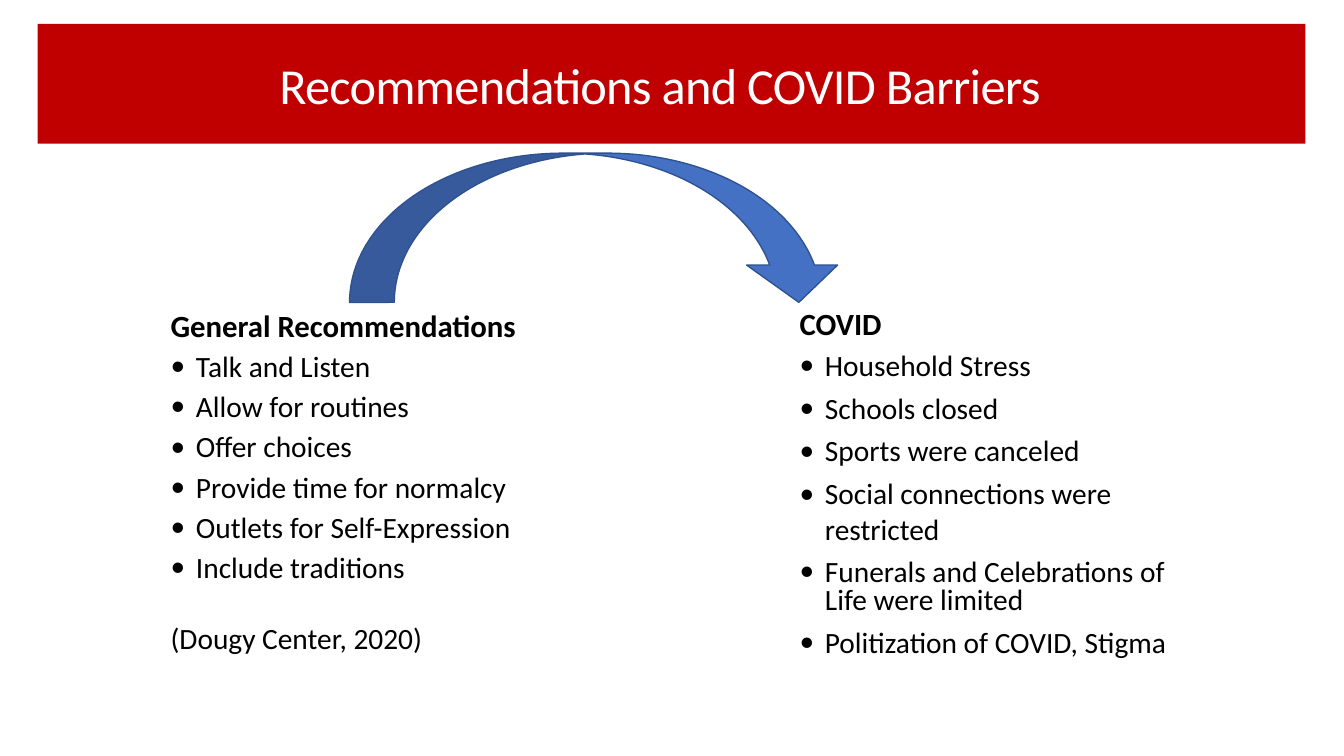
from lxml import etree
from pptx import Presentation
from pptx.dml.color import RGBColor
from pptx.enum import shapes, text
from pptx.oxml.ns import qn
from pptx.util import Cm, Pt

RED = RGBColor(0xC0, 0x00, 0x00)
WHITE = RGBColor(0xFF, 0xFF, 0xFF)
BLACK = RGBColor(0x00, 0x00, 0x00)
BLUE = RGBColor(0x44, 0x71, 0xC4)
DARK_BLUE = RGBColor(0x2E, 0x52, 0x8F)

RECOMMENDATIONS = [
    "Talk and Listen",
    "Allow for routines",
    "Offer choices",
    "Provide time for normalcy",
    "Outlets for Self-Expression",
    "Include traditions",
]
BARRIERS = [
    "Household Stress",
    "Schools closed",
    "Sports were canceled",
    "Social connections were restricted",
    "Funerals and Celebrations of Life were limited",
    "Politization of COVID, Stigma",
]


def add_frame(slide, left, top, width, height, inset_top):
    """Add a wrapping text box and return its text frame."""
    frame = slide.shapes.add_textbox(left, top, width, height).text_frame
    frame.word_wrap = True
    frame.margin_left, frame.margin_top = Cm(0.03), inset_top
    frame.margin_right = frame.margin_bottom = 0
    return frame


def add_line(frame, wording, size, color=BLACK, bold=False, before=0, bullet=False):
    """Write the next paragraph of a frame and return it."""
    line = frame.paragraphs[0]
    if line.text:
        line = frame.add_paragraph()
        line.space_before = Pt(before)
    line.text = wording
    if bullet:
        properties = line._p.get_or_add_pPr()
        properties.set("marL", str(Cm(0.64)))
        properties.set("indent", str(-Cm(0.64)))
        etree.SubElement(properties, qn("a:buFont")).set("typeface", "Calibri")
        etree.SubElement(properties, qn("a:buChar")).set("char", "•")
    for run in line.runs:
        run.font.name = "Calibri"
        run.font.size = Pt(size)
        run.font.bold = bold
        run.font.color.rgb = color
    return line


def add_title_band(slide, left, top, width, height):
    """Draw the red band with the slide title."""
    band = slide.shapes.add_shape(shapes.MSO_SHAPE.RECTANGLE, left, top, width, height)
    band.shadow.inherit = False
    band.fill.solid()
    band.fill.fore_color.rgb = RED
    band.line.fill.background()
    frame = add_frame(slide, left + Cm(6.06), top + Cm(0.7), Cm(19.84), Cm(1.6), Cm(0.03))
    frame.vertical_anchor = text.MSO_ANCHOR.MIDDLE
    title = add_line(frame, "Recommendations and COVID Barriers", 36, WHITE)
    title.runs[0]._r.get_or_add_rPr().set("spc", "-50")


def add_arrow(slide, left, top, width, height):
    """Draw the curved arrow from the recommendations to the barriers."""
    arrow = slide.shapes.add_shape(shapes.MSO_SHAPE.CURVED_DOWN_ARROW, left, top, width, height)
    arrow.shadow.inherit = False
    for index, share in enumerate((0.3, 0.61, 0.25)):
        arrow.adjustments[index] = share
    arrow.fill.solid()
    arrow.fill.fore_color.rgb = BLUE
    arrow.line.color.rgb = DARK_BLUE
    arrow.line.width = Pt(0.96)


def add_recommendations(slide, left, top, width, height):
    """Write the general recommendations and their citation."""
    frame = add_frame(slide, left, top, width, height, Cm(0.15))
    add_line(frame, "General Recommendations", 22, bold=True)
    for recommendation in RECOMMENDATIONS:
        add_line(frame, recommendation, 21, before=3.5, bullet=True)
    add_line(frame, "(Dougy Center, 2020)", 21, before=25.5)


def add_barriers(slide, left, top, width, height):
    """Write the COVID heading and the barriers below it."""
    heading = add_frame(slide, left, top, Cm(2.2), Cm(0.99), Cm(0.03))
    add_line(heading, "COVID", 22, bold=True)
    list_top = Cm(0.86)
    frame = add_frame(slide, left, top + list_top, width, height - list_top, Cm(0.23))
    for barrier in BARRIERS:
        line = add_line(frame, barrier, 21, before=5.4, bullet=True)
        if barrier.startswith("Funerals"):
            line.line_spacing = 0.8
            line.space_before = Pt(10.1)


def main():
    """Build and save the slide."""
    deck = Presentation()
    deck.slide_width, deck.slide_height = Cm(33.87), Cm(19.05)
    slide = deck.slides.add_slide(deck.slide_layouts[6])
    add_title_band(slide, Cm(0.95), Cm(0.6), Cm(31.95), Cm(3.02))
    add_recommendations(slide, Cm(4.27), Cm(7.57), Cm(9.02), Cm(9.14))
    add_barriers(slide, Cm(20.12), Cm(7.65), Cm(10.01), Cm(9.01))
    add_arrow(slide, Cm(8.81), Cm(3.86), Cm(12.47), Cm(3.76))
    deck.save("out.pptx")


if __name__ == "__main__":
    main()
